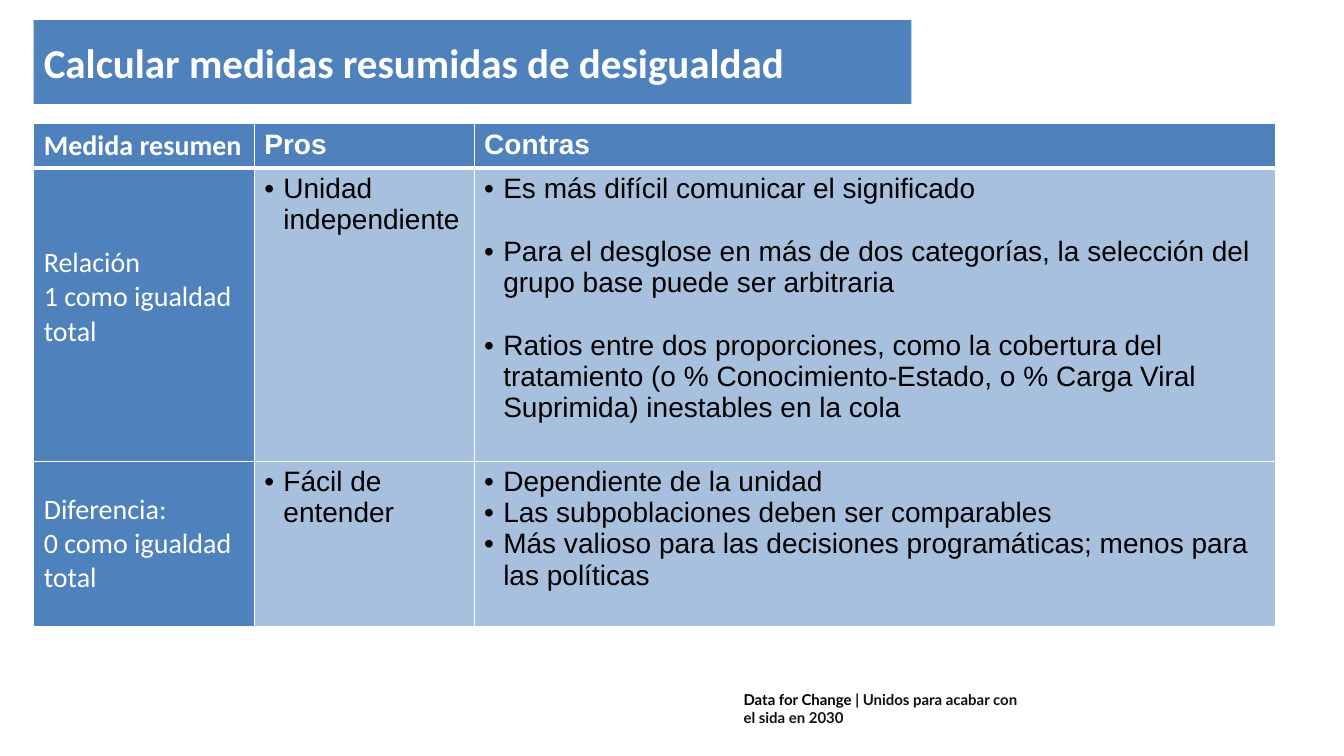
"""Build the slide comparing summary measures of inequality."""
import pptx
import pptx.dml.color
import pptx.enum.text
import pptx.oxml
import pptx.util
from pptx.oxml.ns import nsdecls
from pptx.util import Cm, Pt

BLUE, PALE_BLUE, WHITE, BLACK = "4F81BD", "A7C0DE", "FFFFFF", "000000"
MIDDLE = pptx.enum.text.MSO_ANCHOR.MIDDLE


def color(hex_code):
    return pptx.dml.color.RGBColor.from_string(hex_code)


def style(font, name, size, hex_code, bold=False):
    font.name, font.size, font.bold = name, Pt(size), bold
    font.color.rgb = color(hex_code)


deck = pptx.Presentation()
deck.slide_width, deck.slide_height = Cm(33.87), Cm(19.05)
slide = deck.slides.add_slide(deck.slide_layouts[5])

title = slide.shapes.title
title.left, title.top, title.width, title.height = Cm(0.85), Cm(0.51), Cm(22.12), Cm(2.11)
title.fill.solid()
title.fill.fore_color.rgb = color(BLUE)
title.text_frame.text = "Calcular medidas resumidas de desigualdad"
title.text_frame.auto_size = pptx.enum.text.MSO_AUTO_SIZE.NONE
title.text_frame.vertical_anchor = MIDDLE
heading = title.text_frame.paragraphs[0]
heading.alignment = pptx.enum.text.PP_ALIGN.LEFT
style(heading.font, "Calibri", 29.3, WHITE, True)

measures = [
    [["Medida resumen"], ["Pros"], ["Contras"]],
    [
        ["Relación \v1 como igualdad total"],
        ["Unidad independiente"],
        [
            "Es más difícil comunicar el significado",
            "Para el desglose en más de dos categorías, la selección del grupo base puede ser arbitraria",
            "Ratios entre dos proporciones, como la cobertura del tratamiento "
            "(o % Conocimiento-Estado, o % Carga Viral Suprimida) inestables en la cola",
        ],
    ],
    [
        ["Diferencia:", "0 como igualdad total"],
        ["Fácil de entender"],
        [
            "Dependiente de la unidad",
            "Las subpoblaciones deben ser comparables",
            "Más valioso para las decisiones programáticas; menos para las políticas",
        ],
    ],
]
comparison = slide.shapes.add_table(3, 3, Cm(0.85), Cm(3.12), Cm(31.3), Cm(12.62)).table
comparison.horz_banding = False
for column, width in zip(comparison.columns, (5.56, 5.54, 20.2)):
    column.width = Cm(width)
for row, height in zip(comparison.rows, (1.06, 7.38, 4.18)):
    row.height = Cm(height)

for r, measure in enumerate(measures):
    for c, points in enumerate(measure):
        cell = comparison.cell(r, c)
        is_header, is_bulleted = r == 0, r > 0 and c > 0
        edges = {
            "L": 1,
            "R": 1,
            "T": 3 if r == 1 else 1,
            "B": 3 if is_header else 1,
        }
        for edge, weight in edges.items():
            cell._tc.get_or_add_tcPr().append(pptx.oxml.parse_xml(
                f'<a:ln{edge} {nsdecls("a")} w="{Pt(weight)}"><a:solidFill>'
                f'<a:srgbClr val="{WHITE}"/></a:solidFill></a:ln{edge}>'))
        cell.fill.solid()
        cell.fill.fore_color.rgb = color(PALE_BLUE if is_bulleted else BLUE)
        if r > 0 and c == 0:
            cell.vertical_anchor = MIDDLE
        cell.text_frame.text = "\n".join(points)
        for i, point in enumerate(cell.text_frame.paragraphs):
            if is_bulleted:
                properties = point._p.get_or_add_pPr()
                properties.set("marL", str(Cm(0.48)))
                properties.set("indent", str(-Cm(0.48)))
                for bullet in ('buFont {} typeface="Arial"', 'buChar {} char="•"'):
                    properties.append(pptx.oxml.parse_xml(f"<a:{bullet.format(nsdecls('a'))}/>"))
            if r == 1 and i > 0:
                point.space_before = Pt(22.5)
            style(point.font, "Arial" if c else "Calibri", 20,
                  BLACK if is_bulleted else WHITE, is_header)
comparison.cell(1, 0).margin_bottom = Cm(1)

footer = slide.shapes.add_textbox(Cm(18.49), Cm(17.27), Cm(7.77), Cm(0.71)).text_frame
footer.word_wrap = True
for words, hex_code in (("Data for Change", BLACK),
                        (" | Unidos para acabar con el sida en 2030", "111111")):
    run = footer.paragraphs[0].add_run()
    run.text = words
    style(run.font, "Lato", 10.7, hex_code, True)

deck.save("out.pptx")
